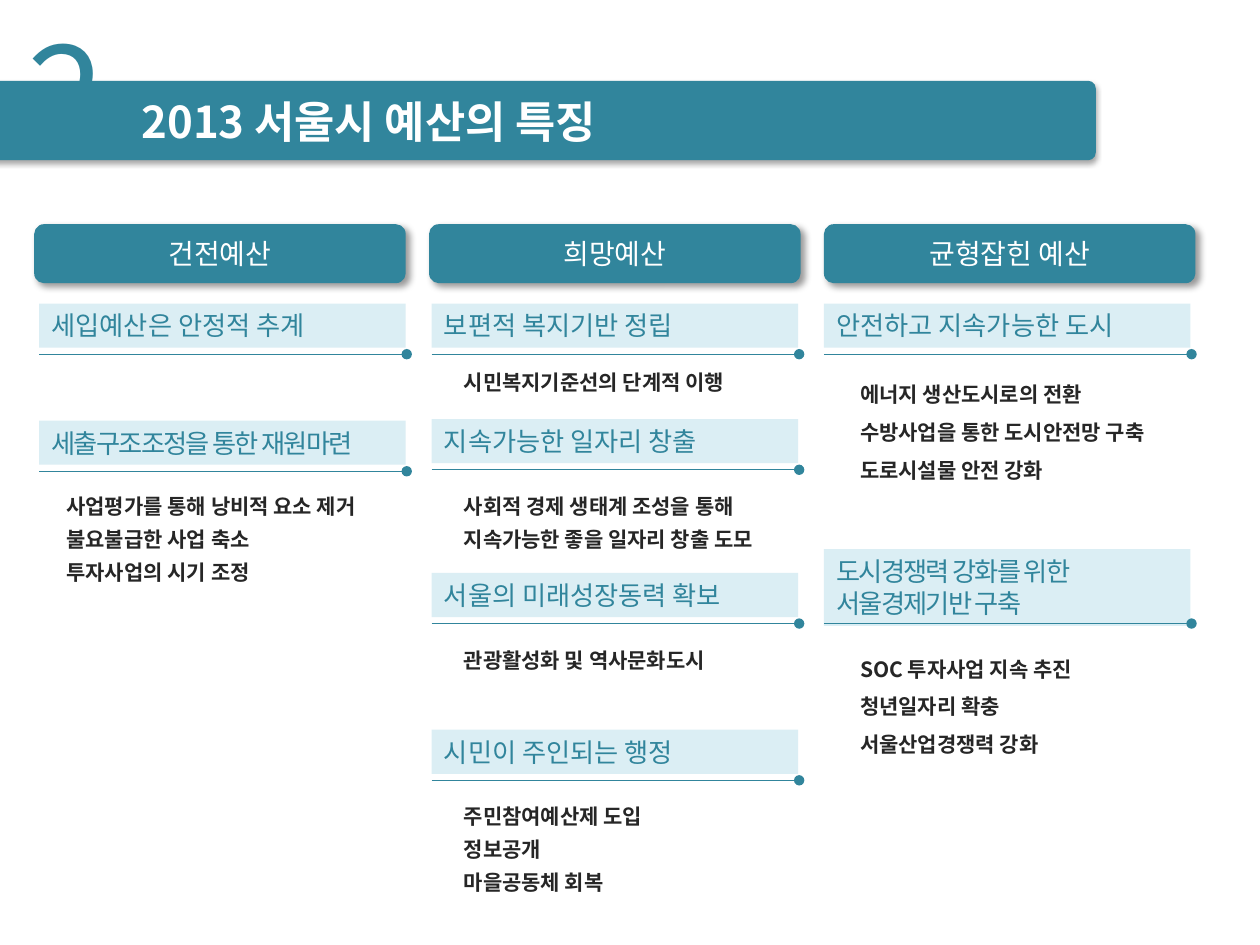
from lxml import etree
from pptx import Presentation
from pptx.dml.color import RGBColor
from pptx.enum.shapes import MSO_CONNECTOR, MSO_SHAPE
from pptx.enum.text import MSO_ANCHOR, MSO_AUTO_SIZE, PP_ALIGN
from pptx.oxml.ns import qn
from pptx.util import Cm, Pt

TEAL = RGBColor(0x31, 0x85, 0x9C)
PALE = RGBColor(0xDB, 0xEE, 0xF4)
DARK = RGBColor(0x26, 0x26, 0x26)
WHITE = RGBColor(0xFF, 0xFF, 0xFF)
FONT = "Noto Sans CJK KR"
RECT, ROUND = MSO_SHAPE.RECTANGLE, MSO_SHAPE.ROUNDED_RECTANGLE
LINE = MSO_CONNECTOR.STRAIGHT
MIDDLE, TOP = MSO_ANCHOR.MIDDLE, MSO_ANCHOR.TOP
LEFT, CENTER = PP_ALIGN.LEFT, PP_ALIGN.CENTER
GROW = MSO_AUTO_SIZE.SHAPE_TO_FIT_TEXT

BAR_W, BAR_H, BAR_GAP = 7.39, 0.89, 7.91
TAB_W, TAB_GAP = 7.49, 7.96

# Per column: title, body indent, body line spacing, sections.
# Per section: heading, rule height, body top, body lines.
COLUMNS = [
    ("건전예산", 0.3, 1.3, [
        ("세입예산은 안정적 추계", 7.14, 0, []),
        ("세출구조조정을 통한 재원마련", 9.5, 9.68,
         ["사업평가를 통해 낭비적 요소 제거", "불요불급한 사업 축소",
          "투자사업의 시기 조정"]),
    ]),
    ("희망예산", 0.4, 1.3, [
        ("보편적 복지기반 정립", 7.14, 7.32, ["시민복지기준선의 단계적 이행"]),
        ("지속가능한 일자리 창출", 9.47, 9.68,
         ["사회적 경제 생태계 조성을 통해 지속가능한 좋을 일자리 창출 도모"]),
        ("서울의 미래성장동력 확보", 12.57, 12.78, ["관광활성화 및 역사문화도시"]),
        ("시민이 주인되는 행정", 15.73, 15.93,
         ["주민참여예산제 도입", "정보공개", "마을공동체 회복"]),
    ]),
    ("균형잡힌 예산", 0.48, 1.5, [
        ("안전하고 지속가능한 도시", 7.14, 7.32,
         ["에너지 생산도시로의 전환", "수방사업을 통한 도시안전망 구축",
          "도로시설물 안전 강화"]),
        ("도시경쟁력 강화를 위한 \v서울경제기반 구축", 12.57, 12.85,
         ["SOC 투자사업 지속 추진", "청년일자리 확충", "서울산업경쟁력 강화"]),
    ]),
]
TIGHT = {"세출구조조정을 통한 재원마련", "도시경쟁력 강화를 위한 \v서울경제기반 구축"}


def write(shape, lines, size, color, bold=False, align=LEFT, anchor=TOP,
          gap=None, track=0, grow=True):
    """Fill a shape with one paragraph per line."""
    frame = shape.text_frame
    frame.word_wrap = True
    frame.vertical_anchor = anchor
    if grow:
        frame.auto_size = GROW
    frame.text = "\n".join(lines)
    for para in frame.paragraphs:
        para.alignment = align
        if gap:
            para.line_spacing = gap
        for run in para.runs:
            font = run.font
            font.size, font.bold, font.name = Pt(size), bold, FONT
            font.color.rgb = color
            props = run._r.get_or_add_rPr()
            etree.SubElement(props, qn("a:ea"), typeface=FONT)
            if track:
                props.set("spc", str(track * 100))


def block(slide, kind, x, y, w, h, fill):
    shape = slide.shapes.add_shape(kind, Cm(x), Cm(y), Cm(w), Cm(h))
    shape.shadow.inherit = False
    shape.fill.solid()
    shape.fill.fore_color.rgb = fill
    shape.line.fill.background()
    return shape


def shade(shape, alpha, blur, dist, angle):
    """Give a shape a soft black outer shadow."""
    effects = shape._element.spPr.find(qn("a:effectLst"))
    outer = etree.SubElement(
        effects, qn("a:outerShdw"), blurRad=str(Pt(blur)), dist=str(Pt(dist)),
        dir=str(angle * 60000), algn="tl", rotWithShape="0")
    black = etree.SubElement(outer, qn("a:srgbClr"), val="000000")
    etree.SubElement(black, qn("a:alpha"), val=str(alpha * 1000))


def rule(slide, x, y):
    """Draw a thin line that ends in a dot."""
    line = slide.shapes.add_connector(LINE, Cm(x), Cm(y), Cm(x + 7.41), Cm(y))
    line.line.color.rgb = TEAL
    line.line.width = Pt(0.75)
    etree.SubElement(line.line._get_or_add_ln(), qn("a:tailEnd"), type="oval")
    etree.SubElement(line._element.spPr, qn("a:effectLst"))


def box(slide, x, y, w, h):
    return slide.shapes.add_textbox(Cm(x), Cm(y), Cm(w), Cm(h))


def banner(slide):
    bar = block(slide, ROUND, -0.69, 1.63, 22.78, 1.6, TEAL)
    bar.adjustments[0] = 0.095
    shade(bar, 35, 3.1, 1.8, 90)
    write(bar, ["2013 서울시 예산의 특징"], 25, WHITE, bold=True,
          anchor=MIDDLE, grow=False)
    bar.text_frame.margin_left = Cm(3.5)

    # Chapter number with a white edge
    num = box(slide, 0.3, 0.05, 2.39, 3.68)
    write(num, ["2"], 80, TEAL)
    props = num.text_frame.paragraphs[0].runs[0]._r.get_or_add_rPr()
    edge = etree.Element(qn("a:ln"), w=str(Pt(3)))
    fill = etree.SubElement(edge, qn("a:solidFill"))
    etree.SubElement(fill, qn("a:srgbClr"), val=str(WHITE))
    props.insert(0, edge)


def section(slide, x, indent, gap, item):
    head, y, top, lines = item
    # A two-line heading has a taller bar that touches its rule
    tall, lift = (1.55, 1.5) if "\v" in head else (BAR_H, 1.02)
    bar = block(slide, RECT, x, y - lift, BAR_W, tall, PALE)
    write(bar, [head], 15, TEAL, track=-1 if head in TIGHT else 0)
    rule(slide, x, y)
    if lines:
        # The short first body in the middle column keeps single spacing
        if len(lines) == 1 and top < 8:
            gap = None
        body = box(slide, x + indent, top, 7.19, 0.76 * len(lines))
        write(body, lines, 12, DARK, bold=True, gap=gap)


def main():
    deck = Presentation()
    deck.slide_width, deck.slide_height = Cm(25.4), Cm(19.05)
    slide = deck.slides.add_slide(deck.slide_layouts[6])
    banner(slide)
    for i, (title, indent, gap, items) in enumerate(COLUMNS):
        tab = block(slide, ROUND, 0.69 + i * TAB_GAP, 4.52, TAB_W, 1.19, TEAL)
        shade(tab, 40, 4, 3, 45)
        write(tab, [title], 16, WHITE, align=CENTER, anchor=MIDDLE, grow=False)
        for item in items:
            section(slide, 0.79 + i * BAR_GAP, indent, gap, item)
    deck.save("out.pptx")


if __name__ == "__main__":
    main()
